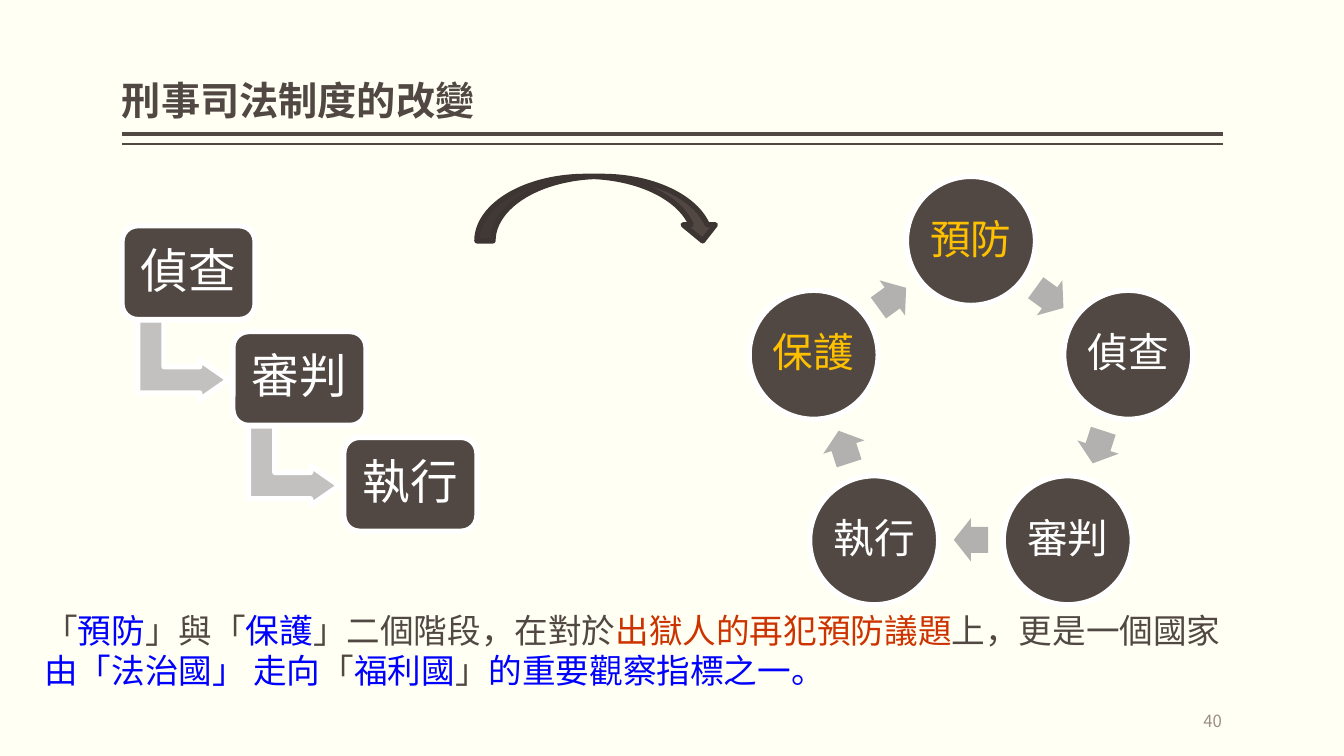
from dataclasses import dataclass
from math import cos, radians, sin

from lxml.etree import SubElement
from pptx import Presentation
from pptx.dml.color import RGBColor
from pptx.enum.shapes import MSO_CONNECTOR, MSO_SHAPE
from pptx.enum.text import MSO_ANCHOR, MSO_AUTO_SIZE, PP_ALIGN
from pptx.oxml.ns import qn
from pptx.shapes.autoshape import Shape
from pptx.slide import Slide
from pptx.text.text import TextFrame
from pptx.util import Emu, Pt

EMU_PER_PX = 9144  # 100 px to the inch


@dataclass(frozen=True)
class Theme:
    background: str = "FFFFF3"
    dark: str = "514843"
    dark_edge: str = "3C3532"
    white: str = "FFFFFF"
    gold: str = "FFC000"
    blue: str = "0000FF"
    red: str = "CC3300"
    step_arrow: str = "C2C1C0"
    cycle_arrow: str = "B3B1B0"
    page_number: str = "9D8F88"
    body_font: str = "Noto Sans CJK TC"
    diagram_font: str = "Calibri"
    title_size: int = 28
    step_size: int = 34
    cycle_size: int = 29
    note_size: int = 24
    page_size: int = 12
    outline: float = 3.78


THEME = Theme()


@dataclass(frozen=True)
class Box:
    left: int
    top: int
    width: int
    height: int

    def emu(self) -> tuple[Emu, Emu, Emu, Emu]:
        return px(self.left), px(self.top), px(self.width), px(self.height)

    def moved(self, right: int, down: int) -> "Box":
        return Box(self.left + right, self.top + down, self.width, self.height)


@dataclass(frozen=True)
class Stage:
    name: str
    color: str = THEME.white


@dataclass(frozen=True)
class Phrase:
    text: str
    color: str = THEME.dark


STEPS = [Stage("偵查"), Stage("審判"), Stage("執行")]
FIRST_STEP = Box(121, 224, 132, 93)
FIRST_STEP_ARROW = Box(142, 312, 79, 90)
STEP_RIGHT, STEP_DOWN = 110, 105

CYCLE = [Stage("預防", THEME.gold), *STEPS, Stage("保護", THEME.gold)]
CYCLE_X, CYCLE_Y, CYCLE_RADIUS = 963, 403, 164

NOTE = [
    Phrase("「"),
    Phrase("預防", THEME.blue),
    Phrase("」與「"),
    Phrase("保護", THEME.blue),
    Phrase("」二個階段，在對於"),
    Phrase("出獄人的再犯預防議題", THEME.red),
    Phrase("上，更是一個國家"),
    Phrase("由「法治國」 走向", THEME.blue),
    Phrase("「"),
    Phrase("福利國", THEME.blue),
    Phrase("」"),
    Phrase("的重要觀察指標之一。", THEME.blue),
]


def px(length: int) -> Emu:
    return Emu(length * EMU_PER_PX)


def rgb(color: str) -> RGBColor:
    return RGBColor.from_string(color)


def set_margins(frame: TextFrame, horizontal: int, vertical: int) -> None:
    frame.margin_left = frame.margin_right = px(horizontal)
    frame.margin_top = frame.margin_bottom = px(vertical)


def write(frame: TextFrame, phrases: list[Phrase], font_name: str, size: int,
          align: PP_ALIGN, bold: bool = False, spacing: float = 1.0) -> None:
    """Fill the frame with one paragraph of coloured phrases."""
    paragraph = frame.paragraphs[0]
    paragraph.alignment = align
    paragraph.line_spacing = spacing
    font = paragraph.font
    font.size, font.bold, font.name = Pt(size), bold, font_name
    properties = paragraph._p.pPr.find(qn("a:defRPr"))
    SubElement(properties, qn("a:ea"), typeface=THEME.body_font)
    for phrase in phrases:
        run = paragraph.add_run()
        run.text = phrase.text
        run.font.color.rgb = rgb(phrase.color)


def add_shape(slide: Slide, kind: MSO_SHAPE, box: Box, fill: str, edge: str | None = None,
              rotation: float = 0, adjustments: tuple[float, ...] = ()) -> Shape:
    shape = slide.shapes.add_shape(kind, *box.emu())
    shape.shadow.inherit = False
    shape.rotation = rotation
    for index, value in enumerate(adjustments):
        shape.adjustments[index] = value
    shape.fill.solid()
    shape.fill.fore_color.rgb = rgb(fill)
    if edge:
        shape.line.color.rgb = rgb(edge)
        shape.line.width = Pt(THEME.outline)
    else:
        shape.line.fill.background()
    return shape


def add_stage(slide: Slide, kind: MSO_SHAPE, box: Box, stage: Stage, size: int) -> None:
    shape = add_shape(slide, kind, box, THEME.dark, THEME.white)
    frame = shape.text_frame
    frame.word_wrap = False
    frame.vertical_anchor = MSO_ANCHOR.MIDDLE
    set_margins(frame, 4, 4)
    write(frame, [Phrase(stage.name, stage.color)], THEME.diagram_font, size,
          PP_ALIGN.CENTER, spacing=0.9)


def add_rule(slide: Slide, top: int, width: int) -> None:
    line = slide.shapes.add_connector(
        MSO_CONNECTOR.STRAIGHT, px(121), px(top), px(1213), px(top))
    line.line.color.rgb = rgb(THEME.dark)
    line.line.width = Pt(width)
    SubElement(line._element.spPr, qn("a:effectLst"))


def add_title(slide: Slide) -> None:
    title = slide.shapes.title
    title.left, title.top, title.width, title.height = Box(121, 8, 1092, 120).emu()
    frame = title.text_frame
    frame.auto_size = MSO_AUTO_SIZE.NONE
    frame.vertical_anchor = MSO_ANCHOR.BOTTOM
    set_margins(frame, 0, 5)
    write(frame, [Phrase("刑事司法制度的改變")], THEME.body_font, THEME.title_size,
          PP_ALIGN.LEFT, bold=True, spacing=0.9)


def add_steps(slide: Slide) -> None:
    for index, stage in enumerate(STEPS):
        offset = index * STEP_RIGHT, index * STEP_DOWN
        if index < len(STEPS) - 1:
            add_shape(slide, MSO_SHAPE.BENT_UP_ARROW, FIRST_STEP_ARROW.moved(*offset),
                      THEME.step_arrow, THEME.white, 90, (0.33, 0.25, 0.36))
        add_stage(slide, MSO_SHAPE.ROUNDED_RECTANGLE, FIRST_STEP.moved(*offset),
                  stage, THEME.step_size)


def box_on_cycle(angle: float, radius: float, width: int, height: int) -> Box:
    """Box centred on the cycle, with the angle clockwise from the top."""
    x = CYCLE_X + radius * sin(radians(angle))
    y = CYCLE_Y - radius * cos(radians(angle))
    return Box(round(x - width / 2), round(y - height / 2), width, height)


def add_cycle(slide: Slide) -> None:
    turn = 360 / len(CYCLE)
    arrow_radius = CYCLE_RADIUS * cos(radians(turn / 2))
    for index, stage in enumerate(CYCLE):
        angle = index * turn
        add_stage(slide, MSO_SHAPE.OVAL, box_on_cycle(angle, CYCLE_RADIUS, 128, 128),
                  stage, THEME.cycle_size)
        middle = angle + turn / 2
        add_shape(slide, MSO_SHAPE.RIGHT_ARROW, box_on_cycle(middle, arrow_radius, 34, 43),
                  THEME.cycle_arrow, rotation=middle, adjustments=(0.6, 0.5))


def add_text(slide: Slide, box: Box, phrases: list[Phrase], size: int,
             align: PP_ALIGN, anchor: MSO_ANCHOR, margin: int) -> None:
    frame = slide.shapes.add_textbox(*box.emu()).text_frame
    frame.word_wrap = True
    frame.vertical_anchor = anchor
    set_margins(frame, margin, 5)
    write(frame, phrases, THEME.body_font, size, align)


def main() -> None:
    presentation = Presentation()
    presentation.slide_width, presentation.slide_height = px(1333), px(750)
    slide = presentation.slides.add_slide(presentation.slide_layouts[5])
    slide.background.fill.solid()
    slide.background.fill.fore_color.rgb = rgb(THEME.background)
    add_rule(slide, 133, 3)
    add_rule(slide, 143, 1)
    add_title(slide)
    add_steps(slide)
    add_cycle(slide)
    add_text(slide, Box(1012, 695, 200, 40), [Phrase("40", THEME.page_number)],
             THEME.page_size, PP_ALIGN.RIGHT, MSO_ANCHOR.MIDDLE, 0)
    add_shape(slide, MSO_SHAPE.CURVED_DOWN_ARROW, Box(473, 175, 240, 64),
              THEME.dark, THEME.dark_edge)
    add_text(slide, Box(34, 600, 1218, 91), NOTE, THEME.note_size,
             PP_ALIGN.LEFT, MSO_ANCHOR.TOP, 10)
    presentation.save("out.pptx")


if __name__ == "__main__":
    main()
